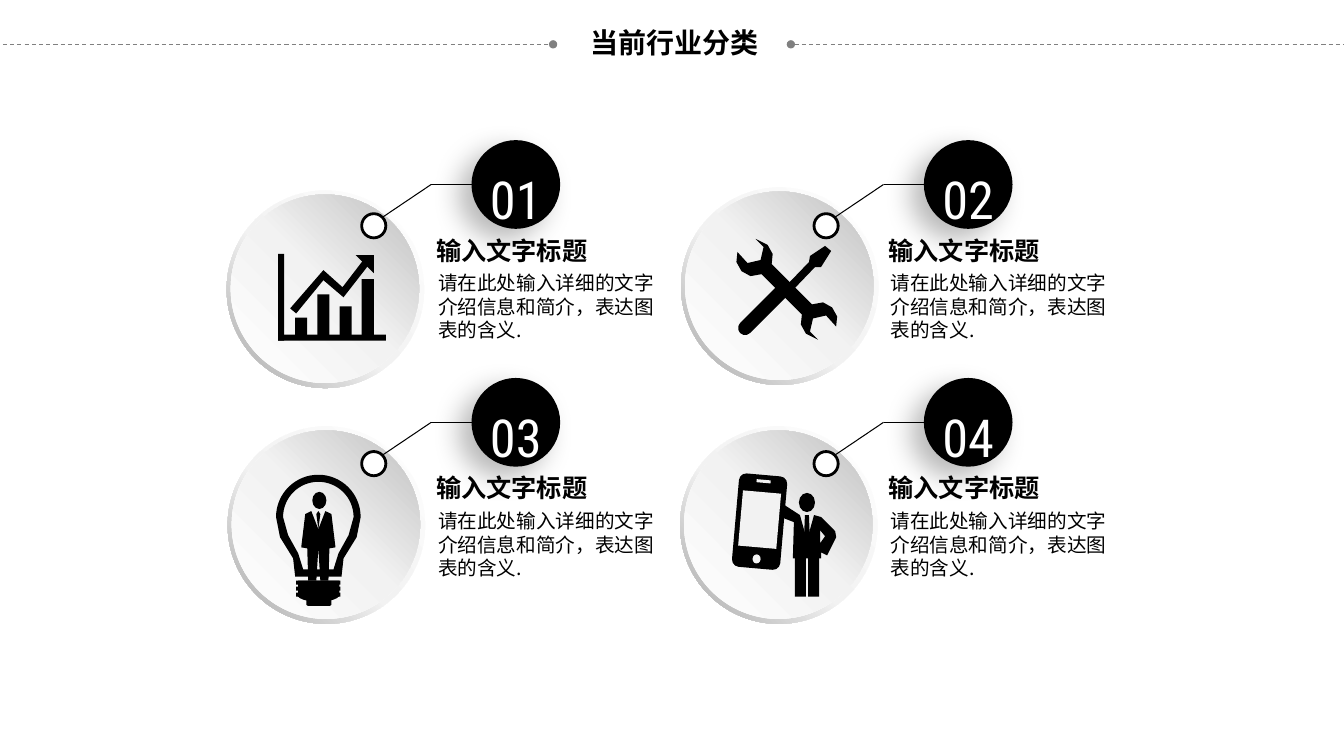
from dataclasses import dataclass
from math import cos, pi, sin
from lxml import etree
from pptx import Presentation
from pptx.dml.color import RGBColor
from pptx.enum.dml import MSO_LINE_DASH_STYLE as Dash
from pptx.enum.shapes import MSO_CONNECTOR, MSO_SHAPE as Shape
from pptx.enum.text import MSO_ANCHOR as Anchor, PP_ALIGN as Align
from pptx.oxml.ns import qn
from pptx.util import Inches, Pt


@dataclass(frozen=True)
class Theme:
    ink: str = "000000"
    paper: str = "FFFFFF"
    screen: str = "F2F2F2"
    rule: str = "808080"
    rim: tuple = ((0, "FFFFFF"), (55, "F2F2F2"), (100, "A6A6A6"))
    face: tuple = ((0, "FFFFFF"), (51, "F2F2F2"), (100, "BFBFBF"))
    text_font: str = "Noto Sans CJK SC"
    number_font: str = "Roboto Condensed"
    title_size: float = 20
    heading_size: float = 18
    body_size: float = 14
    number_size: float = 37.4


THEME = Theme()
TITLE = "当前行业分类"
HEADING = "输入文字标题"
BODY = "请在此处输入详细的文字介绍信息和简介，表达图表的含义."
CARDS = [("01", 2.25, 1.89), ("02", 6.76, 1.86), ("03", 2.26, 4.23), ("04", 6.75, 4.23)]
COLUMN_STEP, ROW_STEP = 4.49, 2.36
TITLE_RULES = [(-0.58, 5.49), (7.85, 13.91)]
BAR_HEIGHTS = [0.18, 0.41, 0.29, 0.56]
TREND = [(2.94, 3.11), (2.88, 3.06), (3.21, 2.68), (3.4, 2.85), (3.63, 2.55), (3.69, 2.59),
         (3.41, 2.95), (3.21, 2.78)]
TREND_HEAD = [(3.53, 2.53), (3.71, 2.53), (3.71, 2.71)]
WRENCH_CENTER = (7.81, 2.87)
WRENCH_HALF = [(7.66, 2.62), (7.67, 2.52), (7.62, 2.43), (7.5, 2.37), (7.58, 2.45), (7.55, 2.58),
               (7.42, 2.61), (7.32, 2.5), (7.31, 2.6), (7.36, 2.69), (7.45, 2.74), (7.56, 2.72)]
SCREWDRIVER = [(7.78, 2.86), (8.03, 2.6), (8.04, 2.54), (8.19, 2.44), (8.25, 2.49),
               (8.15, 2.65), (8.09, 2.65), (7.84, 2.91)]
BULB_X, BULB_Y = 3.16, 5.13
GLASS_OUTSIDE = [(0.38, 5.33), (0.25, 5.54), (0.23, 5.72)]
GLASS_INSIDE = [(0.3, 5.31), (0.2, 5.49), (0.15, 5.65)]
SUIT_HALF = [(0, 5.25), (0.07, 5.07), (0.13, 5.1), (0.17, 5.43), (0.11, 5.44), (0.1, 5.76),
             (0.02, 5.76), (0, 5.44)]
TIE_HALF = [(0, 5.07), (0.02, 5.1), (0, 5.25)]
MAN_X = 8.01
COAT = [(8.01, 5.36), (8.08, 5.11), (8.15, 5.13), (8.29, 5.27), (8.3, 5.33), (8.21, 5.51),
        (8.15, 5.48), (8.15, 5.54), (7.87, 5.54), (7.88, 5.18), (7.75, 5.13), (7.77, 5),
        (7.94, 5.11)]
ELBOW = [(8.14, 5.26), (8.19, 5.32), (8.14, 5.39)]
LONG_TIE_HALF = [(0.02, 5.11), (0.03, 5.36), (0, 5.39)]
PHONE_TILT = 5


def rgb(value):
    return RGBColor.from_string(value)


def add_element(parent, tag, **attributes):
    return etree.SubElement(parent, qn(tag), attributes)


def paint(shape, color):
    shape.shadow.inherit = False
    shape.fill.solid()
    shape.fill.fore_color.rgb = rgb(color)
    shape.line.fill.background()
    return shape


def add_shape(kind, left, top, width, height, color=THEME.ink, rotation=0):
    shape = slide.shapes.add_shape(kind, *map(Inches, (left, top, width, height)))
    shape.rotation = rotation
    return paint(shape, color)


def shade(shape, stops, angle):
    shape.fill.gradient()
    shape.fill.gradient_angle = angle
    stop_list = shape._element.spPr.find(qn("a:gradFill")).find(qn("a:gsLst"))
    stop_list[:] = []
    for position, color in stops:
        stop = add_element(stop_list, "a:gs", pos=str(position * 1000))
        add_element(stop, "a:srgbClr", val=color)


def add_line(x1, y1, x2, y2, color=THEME.ink, dotted=False):
    connector = slide.shapes.add_connector(MSO_CONNECTOR.STRAIGHT, *map(Inches, (x1, y1, x2, y2)))
    connector.line.color.rgb = rgb(color)
    connector.line.width = Pt(0.75)
    properties = connector._element.spPr
    if dotted:
        connector.line.dash_style = Dash.DASH
        for end in ("a:headEnd", "a:tailEnd"):
            add_element(properties.find(qn("a:ln")), end, type="oval")
    add_element(properties, "a:effectLst")


def write(shape, text, size, font=THEME.text_font, color=THEME.ink, bold=False,
          align=Align.LEFT, top_inset=0.05, spacing=None):
    frame = shape.text_frame
    frame.word_wrap = True
    frame.margin_top = Inches(top_inset)
    frame.text = text
    paragraph = frame.paragraphs[0]
    paragraph.alignment = align
    paragraph.line_spacing = spacing
    paragraph.font.size, paragraph.font.bold = Pt(size), bold
    paragraph.font.name, paragraph.font.color.rgb = font, rgb(color)
    properties = paragraph._p.pPr.find(qn("a:defRPr"))
    for target in [properties] + [run._r.get_or_add_rPr() for run in paragraph.runs]:
        add_element(target, "a:ea", typeface=font)


def add_text(left, top, width, height, *content, **style):
    write(slide.shapes.add_textbox(*map(Inches, (left, top, width, height))), *content, **style)


def add_outline(*contours):
    first, *holes = [[(Inches(x), Inches(y)) for x, y in contour] for contour in contours]
    builder = slide.shapes.build_freeform(*first[0])
    builder.add_line_segments(first[1:])
    for hole in holes:
        builder.move_to(*hole[0])
        builder.add_line_segments(hole[1:])
    paint(builder.convert_to_shape(), THEME.ink)


def mirror(half, center):
    return ([(center + x, y) for x, y in half]
            + [(center - x, y) for x, y in reversed(half)])


def glass(radius, lower, steps=16):
    angles = [pi / 2 * step / steps for step in range(steps, -1, -1)]
    dome = [(radius * cos(angle), BULB_Y - radius * sin(angle)) for angle in angles]
    return mirror(dome + lower, BULB_X)


def draw_chart():
    add_outline(TREND)
    add_outline(TREND_HEAD)
    add_shape(Shape.RECTANGLE, 2.76, 2.52, 0.06, 0.86)
    add_shape(Shape.RECTANGLE, 2.76, 3.32, 1.07, 0.06)
    for index, height in enumerate(BAR_HEIGHTS):
        add_shape(Shape.RECTANGLE, 2.93 + 0.22 * index, 3.33 - height, 0.12, height)


def draw_tools():
    center_x, center_y = WRENCH_CENTER
    add_outline(WRENCH_HALF + [(2 * center_x - x, 2 * center_y - y) for x, y in WRENCH_HALF])
    add_outline(SCREWDRIVER)
    handle = add_shape(Shape.ROUNDED_RECTANGLE, 7.25, 3, 0.66, 0.14, rotation=-45)
    handle.adjustments[0] = 0.5


def draw_bulb():
    add_outline(glass(0.42, GLASS_OUTSIDE), glass(0.35, GLASS_INSIDE))
    add_outline(mirror(SUIT_HALF, BULB_X))
    add_outline(mirror(TIE_HALF, BULB_X))
    add_shape(Shape.OVAL, 3.1, 4.88, 0.14, 0.17)
    add_shape(Shape.RECTANGLE, 2.96, 5.76, 0.41, 0.15)
    for row in range(3):
        add_shape(Shape.RECTANGLE, 2.94, 5.76 + 0.06 * row, 0.44, 0.04)
    add_shape(Shape.OVAL, 2.95, 5.83, 0.42, 0.14)
    add_shape(Shape.ROUNDED_RECTANGLE, 3.04, 5.9, 0.25, 0.11)


def draw_phone():
    add_outline(COAT, ELBOW)
    add_outline(mirror(LONG_TIE_HALF, MAN_X))
    add_shape(Shape.OVAL, 7.93, 4.89, 0.16, 0.19)
    for left in (7.89, 8.02):
        add_shape(Shape.RECTANGLE, left, 5.5, 0.11, 0.42)
    case = add_shape(Shape.ROUNDED_RECTANGLE, 7.3, 4.71, 0.48, 0.93, rotation=PHONE_TILT)
    case.adjustments[0] = 0.15
    for kind, *box in [(Shape.RECTANGLE, 7.35, 4.88, 0.38, 0.55),
                       (Shape.ROUNDED_RECTANGLE, 7.51, 4.76, 0.14, 0.03),
                       (Shape.OVAL, 7.47, 5.5, 0.08, 0.09)]:
        add_shape(kind, *box, THEME.screen, PHONE_TILT)


def add_card(index, number, left, top):
    rim = add_shape(Shape.DONUT, left, top, 1.96, 1.96)
    rim.adjustments[0] = 0.049
    shade(rim, THEME.rim, 225)
    shade(add_shape(Shape.OVAL, left + 0.04, top + 0.04, 1.87, 1.87), THEME.face, 45)
    x, y = index % 2 * COLUMN_STEP, index // 2 * ROW_STEP
    add_text(4.25 + x, 2.64 + y, 2.42, 0.87, BODY, THEME.body_size, spacing=Pt(16.8))
    add_text(4.23 + x, 2.33 + y, 1.89, 0.31, HEADING, THEME.heading_size, bold=True, top_inset=0)
    marker = add_shape(Shape.OVAL, 3.59 + x, 2.12 + y, 0.24, 0.24, THEME.paper)
    marker.line.color.rgb, marker.line.width = rgb(THEME.ink), Pt(2)
    add_line(3.79 + x, 2.16 + y, 4.28 + x, 1.83 + y)
    add_line(4.28 + x, 1.83 + y, 5.01 + x, 1.83 + y)
    badge = add_shape(Shape.OVAL, 4.68 + x, 1.39 + y, 0.88, 0.88)
    shadow = add_element(badge._element.spPr.find(qn("a:effectLst")), "a:outerShdw",
                         blurRad=str(Pt(19.7)), dist=str(Pt(11.8)), dir=str(141 * 60000))
    add_element(add_element(shadow, "a:srgbClr", val=THEME.ink), "a:alpha", val="28000")
    add_text(4.68 + x, 1.58 + y, 0.88, 0.62, number, THEME.number_size, THEME.number_font,
             THEME.paper, align=Align.CENTER, top_inset=0.08)


presentation = Presentation()
presentation.slide_width, presentation.slide_height = Inches(13.34), Inches(7.5)
slide = presentation.slides.add_slide(presentation.slide_layouts[5])
title = slide.shapes.title
title.left, title.top, title.width, title.height = map(Inches, (5.54, 0.16, 2.31, 0.52))
write(title, TITLE, THEME.title_size, bold=True, align=Align.CENTER)
title.text_frame.vertical_anchor = Anchor.MIDDLE
for start, end in TITLE_RULES:
    add_line(start, 0.44, end, 0.44, THEME.rule, dotted=True)
for index, (card, draw_icon) in enumerate(zip(CARDS, (draw_chart, draw_tools, draw_bulb, draw_phone))):
    add_card(index, *card)
    draw_icon()
presentation.save("out.pptx")
